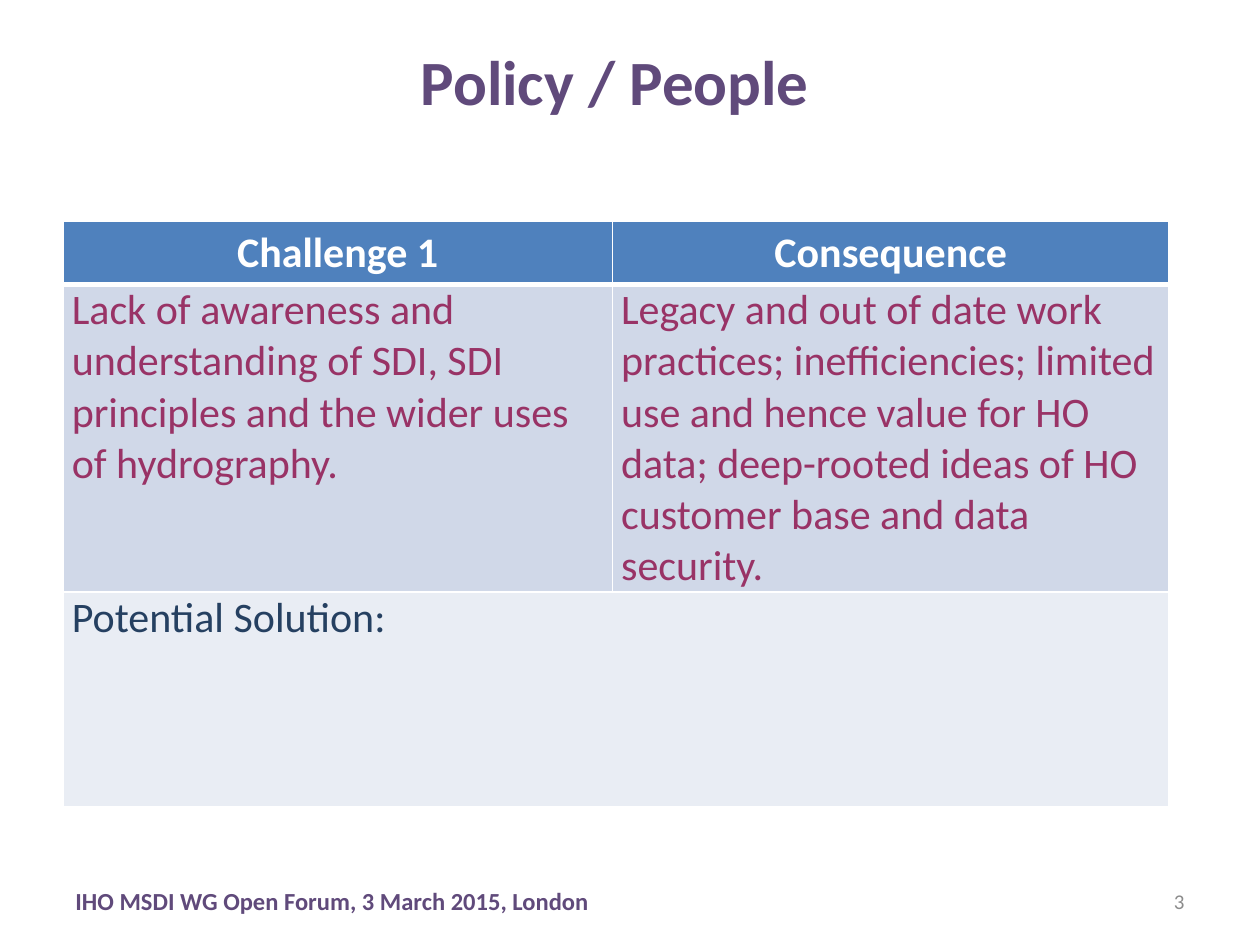
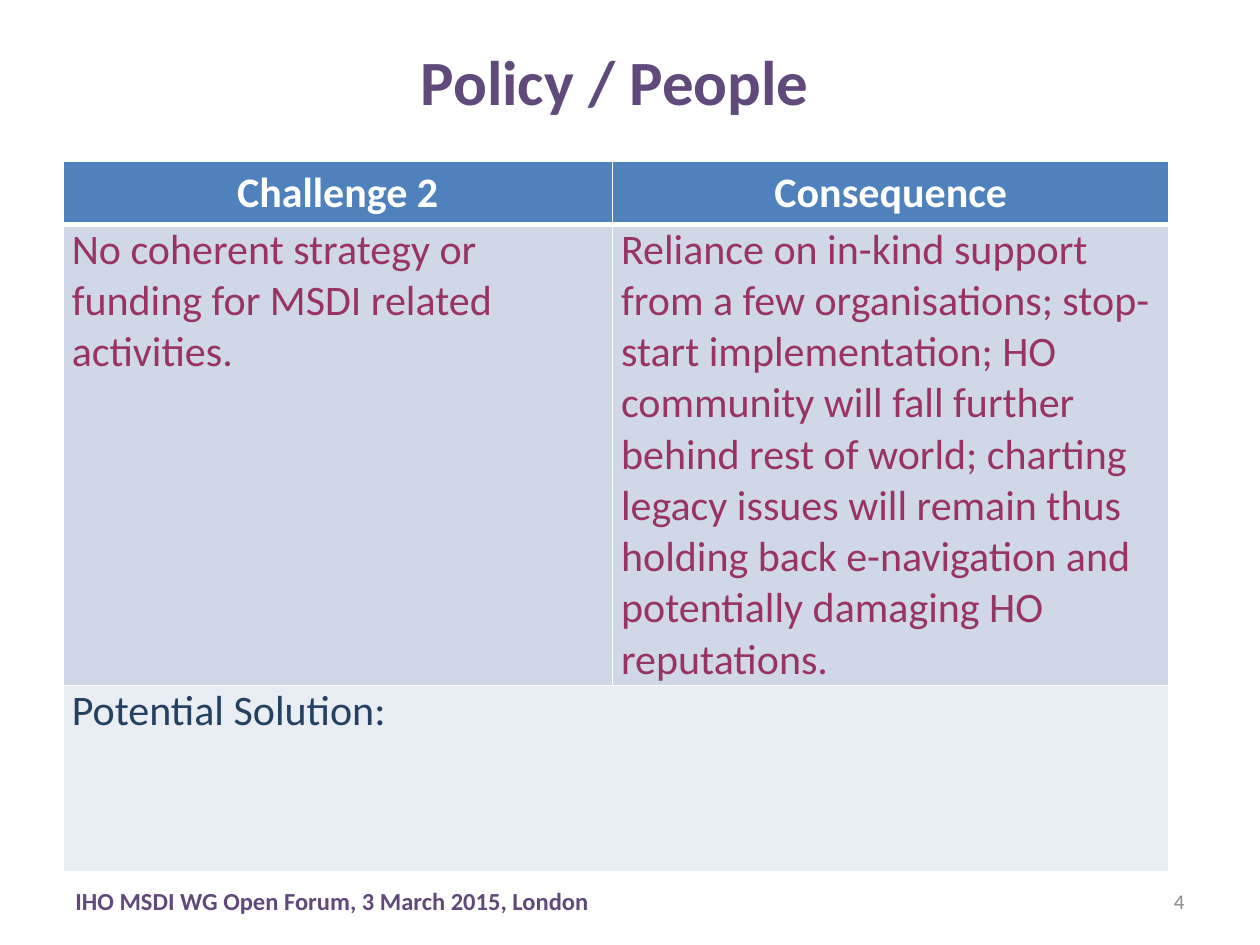
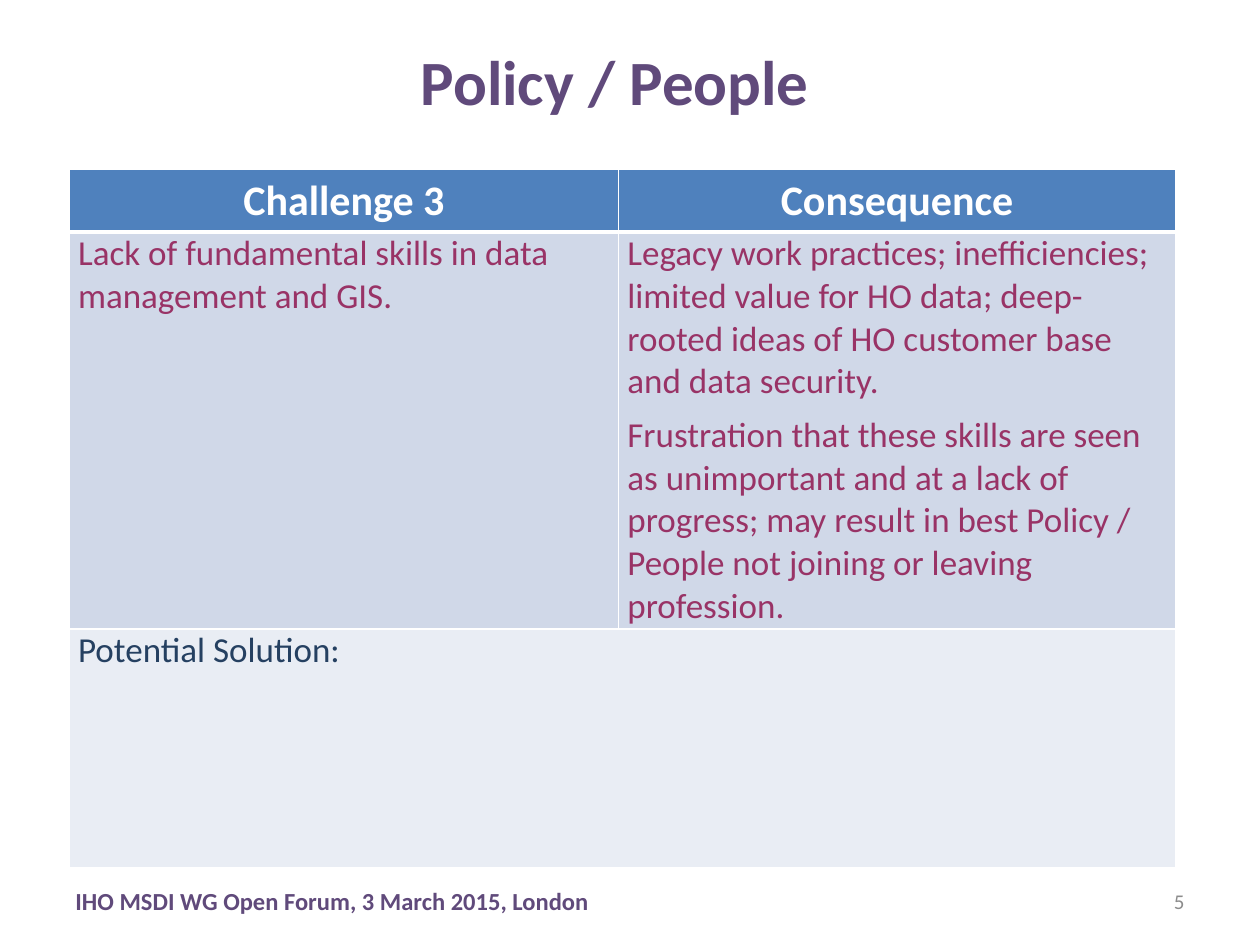
"""Build three slides that set policy challenges against their consequences."""
from lxml import etree
from pptx import Presentation
from pptx.dml.color import RGBColor
from pptx.enum import text as text_enum
from pptx.oxml import ns
from pptx.util import Inches, Pt

COLORS = {
    "heading": "604A7B",
    "number": "8C8C8C",
    "white": "FFFFFF",
    "header": "4F81BD",
    "finding_fill": "D0D8E8",
    "finding": "993366",
    "solution_fill": "E9EDF4",
    "solution": "254061",
}
FONT = "Calibri"
TITLE = "Policy / People"
FOOTER = "IHO MSDI WG Open Forum, 3 March 2015, London"
CONSEQUENCE_HEADING = "Consequence"
SOLUTION = "Potential Solution:"
FIRST_NUMBER = 3

TITLE_BOX = (2.53, 0.09, 4.7, 1.09)
FOOTER_BOX = (0.5, 6.95, 6.08, 0.4)
NUMBER_BOX = (7.17, 6.95, 2.33, 0.4)
COLUMN_WIDTHS = (4.36, 4.42)
HEADER_HEIGHT = 0.5

CHALLENGES = [
    {
        "challenge": "Lack of awareness and understanding of SDI, SDI principles "
                     "and the wider uses of hydrography.",
        "consequence": "Legacy and out of date work practices; inefficiencies; limited use "
                       "and hence value for HO data; deep-rooted ideas of HO customer base "
                       "and data security.",
        "corner": (0.5, 1.76), "heights": (2.44, 1.7), "size": 24,
    },
    {
        "challenge": "No coherent strategy or funding for MSDI related activities.",
        "consequence": "Reliance on in-kind support from a few organisations; stop-start "
                       "implementation; HO community will fall further behind rest of world; "
                       "charting legacy issues will remain thus holding back e-navigation "
                       "and potentially damaging HO reputations.",
        "corner": (0.5, 1.28), "heights": (3.66, 1.48), "size": 24,
    },
    {
        "challenge": "Lack of fundamental skills in data management and GIS.",
        "consequence": "Legacy work practices; inefficiencies; limited value for HO data; "
                       "deep-rooted ideas of HO customer base and data security.\n"
                       "Frustration that these skills are seen as unimportant and at a lack "
                       "of progress; may result in best Policy / People not joining or "
                       "leaving profession.",
        "corner": (0.55, 1.34), "heights": (3.15, 1.9), "size": 20,
    },
]


def write(frame, content, *, size, color, bold=False, align="LEFT", gap=0):
    """Fill a text frame, one paragraph for each line of the content."""
    frame.text = content
    frame.word_wrap = True
    for index, paragraph in enumerate(frame.paragraphs):
        paragraph.alignment = text_enum.PP_ALIGN[align]
        paragraph.space_before = Pt(gap if index else 0)
        font = paragraph.font
        font.name, font.size, font.bold = FONT, Pt(size), bold
        font.color.rgb = RGBColor.from_string(COLORS[color])


def add_label(slide, box, content, **style):
    """Add a vertically centred line of text."""
    frame = slide.shapes.add_textbox(*map(Inches, box)).text_frame
    frame.vertical_anchor = text_enum.MSO_ANCHOR.MIDDLE
    write(frame, content, **style)


def add_title(slide):
    """Place the shared title."""
    title = slide.shapes.title
    title.left, title.top, title.width, title.height = map(Inches, TITLE_BOX)
    title.text_frame.vertical_anchor = text_enum.MSO_ANCHOR.MIDDLE
    write(title.text_frame, TITLE, size=36, color="heading", bold=True, align="CENTER")


def set_borders(cell, widths):
    """Draw white borders with widths given in points for each side."""
    properties = cell._tc.get_or_add_tcPr()
    for position, (side, width) in enumerate(widths.items()):
        line = etree.Element(ns.qn(f"a:ln{side}"), w=str(Pt(width)))
        fill = etree.SubElement(line, ns.qn("a:solidFill"))
        etree.SubElement(fill, ns.qn("a:srgbClr"), val=COLORS["white"])
        properties.insert(position, line)


def add_challenge(slide, number, entry):
    """Add the table of one challenge, its consequence and its solution."""
    heights = (HEADER_HEIGHT, *entry["heights"])
    box = (*entry["corner"], sum(COLUMN_WIDTHS), sum(heights))
    table = slide.shapes.add_table(3, 2, *map(Inches, box)).table
    table.horz_banding = False
    for column, width in zip(table.columns, COLUMN_WIDTHS):
        column.width = Inches(width)
    for row, height in zip(table.rows, heights):
        row.height = Inches(height)

    body = {"size": entry["size"], "gap": 6}
    rows = [
        ((f"Challenge {number}", CONSEQUENCE_HEADING), "header",
         {"size": 24, "color": "white", "bold": True, "align": "CENTER"}),
        ((entry["challenge"], entry["consequence"]), "finding_fill",
         {**body, "color": "finding"}),
        ((SOLUTION, ""), "solution_fill", {**body, "color": "solution"}),
    ]
    for index, (contents, fill, style) in enumerate(rows):
        for column, content in enumerate(contents):
            cell = table.cell(index, column)
            cell.fill.solid()
            cell.fill.fore_color.rgb = RGBColor.from_string(COLORS[fill])
            set_borders(cell, {"L": 1, "R": 1, "T": 3 if index == 1 else 1,
                               "B": 3 if index == 0 else 1})
            if index:
                cell.margin_left = cell.margin_right = Inches(0.07)
                cell.margin_top = cell.margin_bottom = 0
            if content:
                write(cell.text_frame, content, **style)
    table.cell(2, 0).merge(table.cell(2, 1))


def main():
    """Build and save the presentation."""
    deck = Presentation()
    deck.slide_width, deck.slide_height = Inches(10), Inches(7.5)
    title_only = deck.slide_layouts[5]
    for number, entry in enumerate(CHALLENGES, 1):
        slide = deck.slides.add_slide(title_only)
        add_label(slide, FOOTER_BOX, FOOTER, size=14, color="heading", bold=True)
        add_label(slide, NUMBER_BOX, str(FIRST_NUMBER + number - 1),
                  size=12, color="number", align="RIGHT")
        add_challenge(slide, number, entry)
        add_title(slide)
    deck.save("out.pptx")


if __name__ == "__main__":
    main()
